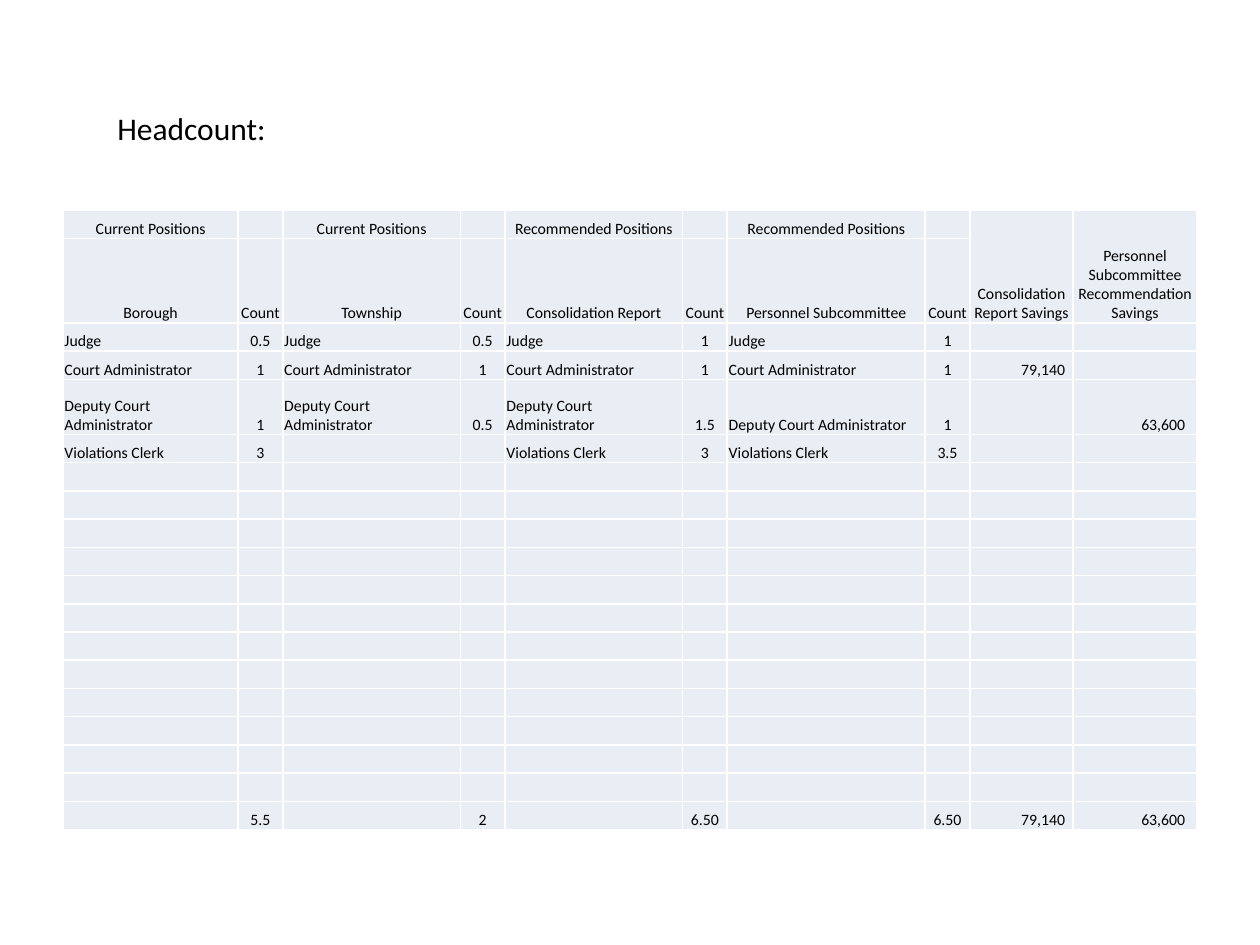
from lxml.etree import SubElement
from pptx import Presentation
from pptx.dml.color import RGBColor
from pptx.enum.text import MSO_ANCHOR, PP_ALIGN
from pptx.oxml.ns import qn
from pptx.util import Cm, Pt

TITLE = "Headcount:"
FONT, INK, CELL_FILL = "Calibri", "000000", "E9EDF4"
CELL_SIZE = 9

HEADERS = [
    ["Current Positions", "", "Current Positions", "", "Recommended Positions", "",
     "Recommended Positions", "", "Consolidation Report Savings",
     "Personnel Subcommittee Recommendation Savings"],
    ["Borough", "Count", "Township", "Count", "Consolidation Report", "Count",
     "Personnel Subcommittee", "Count", "", ""],
]
DEPUTY = "Deputy Court Administrator"
POSITIONS = [
    ["Judge", "0.5", "Judge", "0.5", "Judge", "1", "Judge", "1", "", ""],
    ["Court Administrator", "1", "Court Administrator", "1",
     "Court Administrator", "1", "Court Administrator", "1", "79,140", ""],
    [DEPUTY, "1", DEPUTY, "0.5", DEPUTY, "1.5", DEPUTY, "1", "", "63,600"],
    ["Violations Clerk", "3", "", "", "Violations Clerk", "3",
     "Violations Clerk", "3.5", "", ""],
]
TOTALS = ["", "5.5", "", "2", "", "6.50", "", "6.50", "79,140", "63,600"]
SPARE_ROWS = 12

COLUMN_WIDTHS = [3.53, 0.9, 3.58, 0.9, 3.58, 0.9, 3.99, 0.9, 2.08, 2.5]
ROW_HEIGHT = 0.57
TALL_ROWS = {1: 1.7, 4: 1.11}
SAVINGS_INDENTS = {8: 0.16, 9: 0.24}
CELL_MARGIN = 0.03


def color(hex_value):
    return RGBColor.from_string(hex_value)


def add_text(paragraph, text, size):
    run = paragraph.add_run()
    run.text = text
    run.font.name = FONT
    run.font.size = Pt(size)
    run.font.color.rgb = color(INK)


def alignment(row, column):
    if row < len(HEADERS):
        return PP_ALIGN.CENTER
    if column in SAVINGS_INDENTS:
        return PP_ALIGN.RIGHT
    return PP_ALIGN.CENTER if column % 2 else PP_ALIGN.LEFT


def fill_cell(cell, text, row, column):
    cell.fill.solid()
    cell.fill.fore_color.rgb = color(CELL_FILL)
    cell.vertical_anchor = MSO_ANCHOR.BOTTOM
    cell.margin_left = cell.margin_right = cell.margin_top = Cm(CELL_MARGIN)
    cell.margin_bottom = 0
    if row >= len(HEADERS) and column in SAVINGS_INDENTS:
        cell.margin_right = Cm(SAVINGS_INDENTS[column])
    paragraph = cell.text_frame.paragraphs[0]
    paragraph.alignment = alignment(row, column)
    if text:
        add_text(paragraph, text, CELL_SIZE)
    else:
        # Keeps an empty cell from growing to the default text size
        SubElement(paragraph._p, qn("a:endParaRPr"), sz=str(CELL_SIZE * 100))


def add_headcount_table(slide):
    spare = [[""] * len(COLUMN_WIDTHS)] * SPARE_ROWS
    rows = HEADERS + POSITIONS + spare + [TOTALS]
    heights = [TALL_ROWS.get(row, ROW_HEIGHT) for row in range(len(rows))]
    table = slide.shapes.add_table(
        len(rows), len(COLUMN_WIDTHS), Cm(1.27), Cm(4.24),
        Cm(sum(COLUMN_WIDTHS)), Cm(sum(heights))).table
    table.first_row = table.horz_banding = False
    for column, width in zip(table.columns, COLUMN_WIDTHS):
        column.width = Cm(width)
    for table_row, height in zip(table.rows, heights):
        table_row.height = Cm(height)
    for row, texts in enumerate(rows):
        for column, text in enumerate(texts):
            fill_cell(table.cell(row, column), text, row, column)
    for column in SAVINGS_INDENTS:
        table.cell(0, column).merge(table.cell(1, column))


def add_title(slide):
    title = slide.shapes.title
    title.left, title.top, title.width, title.height = Cm(2.11), Cm(2.08), Cm(17.15), Cm(1.02)
    title.text_frame.vertical_anchor = MSO_ANCHOR.TOP
    paragraph = title.text_frame.paragraphs[0]
    paragraph.alignment = PP_ALIGN.LEFT
    add_text(paragraph, TITLE, 18)


def main():
    presentation = Presentation()
    presentation.slide_width, presentation.slide_height = Cm(25.4), Cm(19.05)
    slide = presentation.slides.add_slide(presentation.slide_layouts.get_by_name("Title Only"))
    add_title(slide)
    add_headcount_table(slide)
    presentation.save("out.pptx")


if __name__ == "__main__":
    main()
